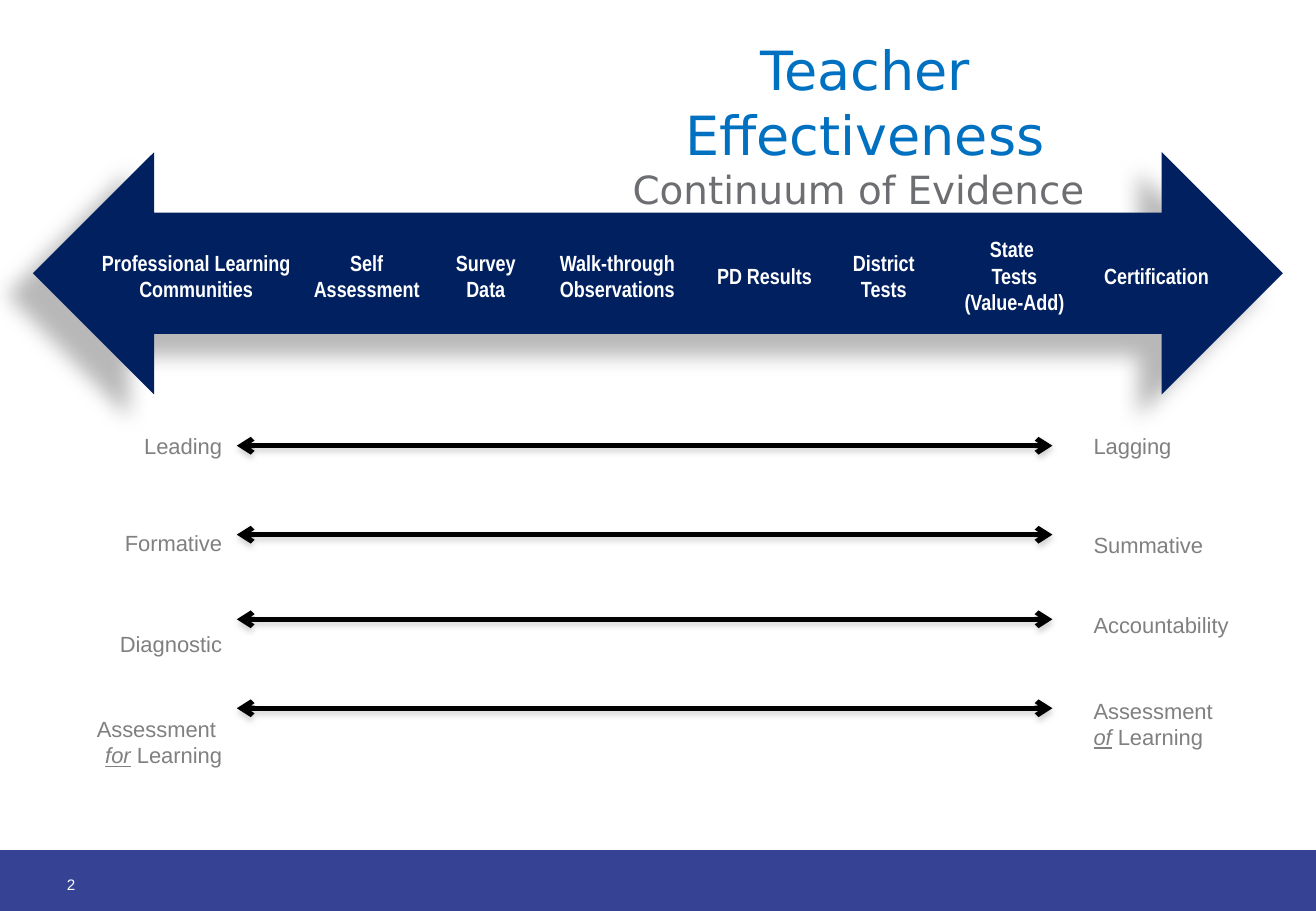
from lxml import etree
from pptx import Presentation
from pptx.dml.color import RGBColor
from pptx.enum.shapes import MSO_CONNECTOR, MSO_SHAPE
from pptx.enum.text import MSO_ANCHOR, PP_ALIGN
from pptx.oxml.ns import qn
from pptx.util import Cm, Pt

LEFT, CENTER, RIGHT = PP_ALIGN.LEFT, PP_ALIGN.CENTER, PP_ALIGN.RIGHT
TOP, MIDDLE = MSO_ANCHOR.TOP, MSO_ANCHOR.MIDDLE
BODY_FONT, NARROW, TITLE_FONT = "Arial", "Arial Narrow", "DejaVu Sans"
NAVY, BAND, WHITE, GREY = "002060", "364395", "FFFFFF", "808080"


def add_text(left, top, width, height, lines, font, color, align, anchor=TOP, bold=False):
    frame = slide.shapes.add_textbox(Cm(left), Cm(top), Cm(width), Cm(height)).text_frame
    frame.word_wrap = True
    frame.vertical_anchor = anchor
    for index, (size, space_before, pieces) in enumerate(lines):
        paragraph = frame.paragraphs[0] if index == 0 else frame.add_paragraph()
        paragraph.alignment = align
        paragraph.space_before = Pt(space_before)
        for words, emphasis, own_color in pieces:
            run = paragraph.add_run()
            run.text = words
            run.font.name = font
            run.font.size = Pt(size)
            run.font.bold = bold
            run.font.italic = run.font.underline = emphasis
            run.font.color.rgb = RGBColor.from_string(own_color or color)


def add_shadow(properties, color, opacity, blur, distance, angle):
    for old in properties.findall(qn("a:effectLst")):
        properties.remove(old)
    effects = etree.SubElement(properties, qn("a:effectLst"))
    shadow = etree.SubElement(
        effects, qn("a:outerShdw"), blurRad=str(Pt(blur)), dist=str(Pt(distance)),
        dir=str(angle * 60000), algn="ctr", rotWithShape="0")
    tint = etree.SubElement(shadow, qn("a:srgbClr"), val=color)
    etree.SubElement(tint, qn("a:alpha"), val=str(opacity * 1000))


presentation = Presentation()
presentation.slide_width, presentation.slide_height = Cm(27.51), Cm(19.05)
slide = presentation.slides.add_slide(presentation.slide_layouts[6])

footer = slide.shapes.add_shape(MSO_SHAPE.RECTANGLE, 0, Cm(17.78), Cm(27.51), Cm(1.27))
continuum = slide.shapes.add_shape(
    MSO_SHAPE.LEFT_RIGHT_ARROW, Cm(0.69), Cm(3.18), Cm(26.13), Cm(5.07))
for body, color in ((footer, BAND), (continuum, NAVY)):
    body.shadow.inherit = False
    body.fill.solid()
    body.fill.fore_color.rgb = RGBColor.from_string(color)
    body.line.fill.background()
add_shadow(continuum.element.spPr, "000000", 28, 11.8, 19.7, 141)

add_text(12.27, 0.64, 11.63, 2.54, [
    (32, 0, [("Teacher Effectiveness", False, "0070C0")]),
    (23, 0, [("Continuum of Evidence ", False, "6D6E71")]),
], TITLE_FONT, GREY, CENTER)

evidence = [
    (1.6, 5.0, ["Professional Learning", "Communities"]),
    (6.19, 2.95, ["Self", "Assessment"]),
    (8.48, 3.35, ["Survey", "Data"]),
    (11.23, 3.35, ["Walk-through", "Observations"]),
    (14.56, 2.84, ["PD Results"]),
    (17.42, 2.11, ["District", "Tests"]),
    (19.72, 2.97, ["State ", "Tests", "(Value-Add)"]),
    (22.69, 2.97, ["Certification"]),
]
for left, width, lines in evidence:
    height = 0.25 + 0.56 * len(lines)
    add_text(left, 5.76 - height / 2, width, height,
             [(13, 0, [(line, False, None)]) for line in lines],
             NARROW, WHITE, CENTER, MIDDLE, True)

for y in (9.32, 11.18, 12.95, 14.81):
    span = slide.shapes.add_connector(
        MSO_CONNECTOR.STRAIGHT, Cm(4.95), Cm(y), Cm(22), Cm(y))
    span.line.color.rgb = RGBColor.from_string("000000")
    span.line.width = Pt(3)
    outline = span.line._get_or_add_ln()
    for end in ("a:headEnd", "a:tailEnd"):
        etree.SubElement(outline, qn(end), type="arrow")
    add_shadow(span.element.spPr, GREY, 35, 3.1, 1.8, 90)

poles = [
    (0.67, 7.54, RIGHT, "for", [("Leading", 0), ("Formative", 42), ("Diagnostic", 44)]),
    (22.61, 7.24, LEFT, "of", [("Lagging", 0), ("Summative", 43), ("Accountability", 32)]),
]
for left, height, align, preposition, terms in poles:
    lines = [(13, gap, [(term, False, None)]) for term, gap in terms + [("Assessment ", 35)]]
    lines.append((13, 0, [(preposition, True, None), (" Learning", False, None)]))
    add_text(left, 8.92, 4.22, height, lines, BODY_FONT, GREY, align)

add_text(1.15, 18.18, 14.99, 0.51, [(9, 0, [("2", False, None)])], BODY_FONT, WHITE, LEFT)

presentation.save("out.pptx")
